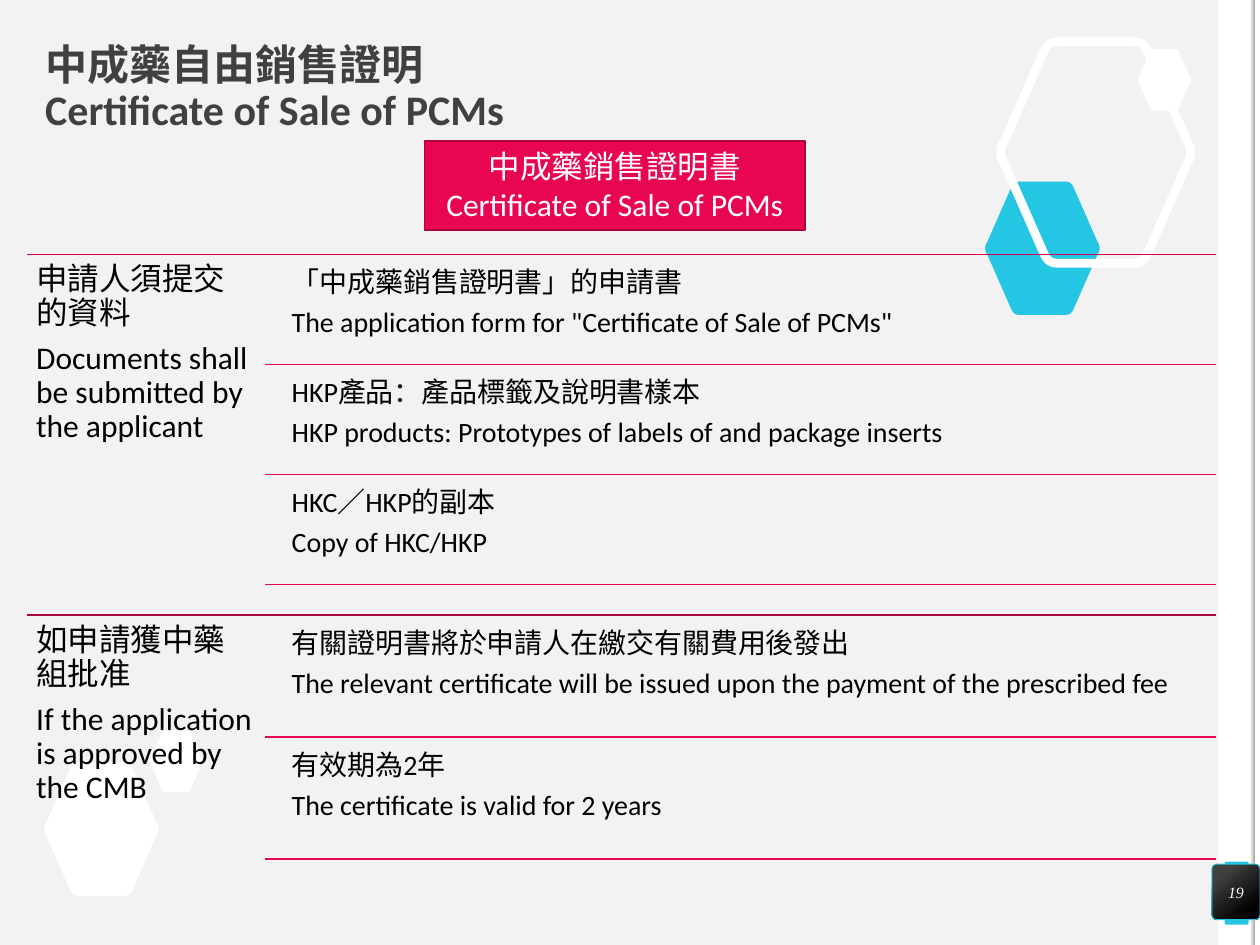
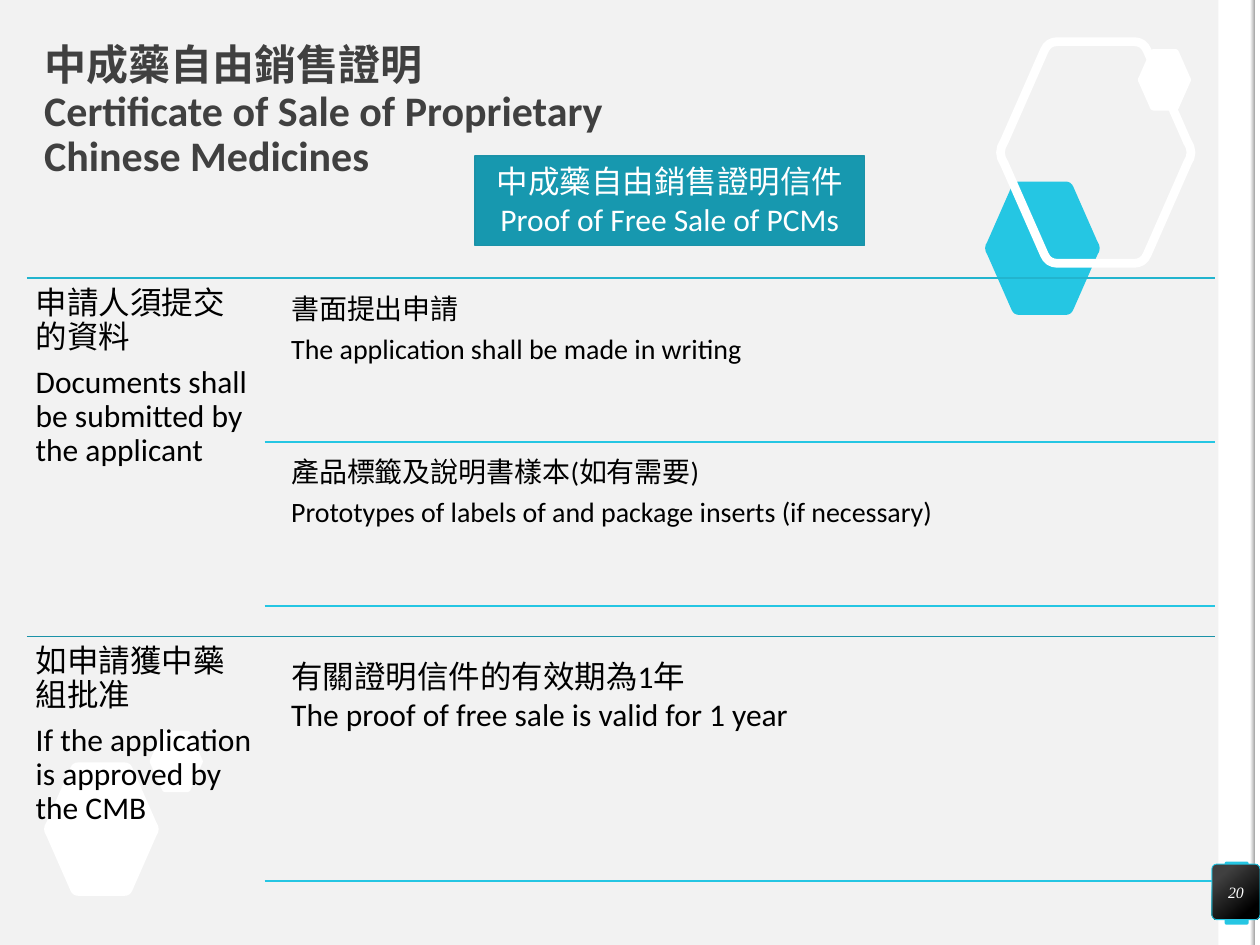
"""Builds two slides on certificates for proprietary Chinese medicines."""
from lxml import etree
from pptx import Presentation
from pptx.dml.color import RGBColor
from pptx.enum.shapes import MSO_CONNECTOR, MSO_SHAPE
from pptx.enum.text import MSO_ANCHOR, MSO_AUTO_SIZE, PP_ALIGN
from pptx.oxml.ns import qn
from pptx.util import Cm, Pt

RECT, ROUNDED = MSO_SHAPE.RECTANGLE, MSO_SHAPE.ROUNDED_RECTANGLE
STRAIGHT = MSO_CONNECTOR.STRAIGHT
TOP, MIDDLE = MSO_ANCHOR.TOP, MSO_ANCHOR.MIDDLE
LEFT, CENTER = PP_ALIGN.LEFT, PP_ALIGN.CENTER
FIXED, GROW = MSO_AUTO_SIZE.NONE, MSO_AUTO_SIZE.SHAPE_TO_FIT_TEXT

FONT, NUMBER_FONT = "Calibri", "Times New Roman"
COLORS = {
    "paper": "F2F2F2", "white": "FFFFFF", "black": "000000",
    "title": "404040", "edge": "A6A6A6", "cyan": "25C6E3",
    "cyan_mid": "22B4CE", "cyan_dark": "1B92A8", "teal": "1798AF",
    "pink": "E80554", "pink_mid": "D3054C", "pink_dark": "AC043E",
}
HEXAGON_CORNERS = [
    ((.23, .04), (.25, 0), (.3, 0)), ((.7, 0), (.75, 0), (.77, .04)),
    ((.98, .45), (1.02, .5), (.98, .55)), ((.77, .96), (.75, 1), (.7, 1)),
    ((.3, 1), (.25, 1), (.23, .96)), ((.02, .55), (-.02, .5), (.02, .45)),
]
HEXAGONS = [
    ((.89, 15.37, 2.31, 2.69), "white", None),
    ((19.86, 3.66, 2.31, 2.69), "cyan", None),
    ((20.17, .84, 3.84, 4.47), None, "white"),
    ((3.02, 14.73, 1.07, 1.24), "white", None),
    ((22.94, .99, 1.07, 1.24), "white", None),
]
DOCUMENTS = ["申請人須提交的資料", "Documents shall be submitted by the applicant"]
APPROVAL = ["如申請獲中藥組批准", "If the application is approved by the CMB"]

CERTIFICATE = {
    "number": "19",
    "title": ["中成藥自由銷售證明", "Certificate of Sale of PCMs"],
    "title_box": (.91, .53, 23.6, 2.54),
    "banner": ["中成藥銷售證明書", "Certificate of Sale of PCMs"],
    "banner_box": (8.56, 2.84, 7.67, 1.8),
    "banner_colors": ("pink", "pink_dark"),
    "item_rule": "pink",
    "sections": [
        {"box": (.55, 5.13, 23.96, 6.76), "rule": "pink_mid", "heading": DOCUMENTS,
         "items": [
             ["「中成藥銷售證明書」的申請書",
              'The application form for "Certificate of Sale of PCMs"'],
             ["HKP產品：產品標籤及說明書樣本",
              "HKP products: Prototypes of labels of and package inserts"],
             ["HKC／HKP的副本", "Copy of HKC/HKP"]]},
        {"box": (.55, 12.4, 23.96, 5.03), "rule": "pink_dark", "heading": APPROVAL,
         "items": [
             ["有關證明書將於申請人在繳交有關費用後發出",
              "The relevant certificate will be issued upon the payment"
              " of the prescribed fee"],
             ["有效期為2年", "The certificate is valid for 2 years"]]},
    ],
}
PROOF = {
    "number": "20",
    "title": ["中成藥自由銷售證明", "Certificate of Sale of Proprietary ",
              "Chinese Medicines"],
    "title_box": (.89, .97, 23.6, 2.59),
    "banner": ["中成藥自由銷售證明信件", "Proof of Free Sale of PCMs"],
    "banner_box": (9.58, 3.15, 7.85, 1.8),
    "banner_colors": ("teal", "cyan_dark"),
    "item_rule": "cyan",
    "sections": [
        {"box": (.54, 5.61, 23.96, 6.76), "rule": "cyan_mid", "heading": DOCUMENTS,
         "items": [
             ["書面提出申請", "The application shall be made in writing"],
             ["產品標籤及說明書樣本(如有需要)",
              "Prototypes of labels of and package inserts (if necessary)"]]},
        {"box": (.54, 12.83, 23.96, 5.16), "rule": "cyan_dark", "heading": APPROVAL,
         "item_size": 18, "item_style": {},
         "items": [
             ["有關證明信件的有效期為1年",
              "The proof of free sale is valid for 1 year"]]},
    ],
}
TIGHT = {"leading": .9, "after": .35}


def rgb(name):
    """Return the named colour."""
    return RGBColor.from_string(COLORS[name])


def lengths(box):
    """Turn a box in centimetres into lengths."""
    return [Cm(value) for value in box]


def paint(shape, fill=None, line=None, width=1):
    """Give a shape flat fill and outline, without shadow."""
    shape.shadow.inherit = False
    if fill:
        shape.fill.solid()
        shape.fill.fore_color.rgb = rgb(fill)
    else:
        shape.fill.background()
    if line:
        shape.line.color.rgb = rgb(line)
        shape.line.width = Pt(width)
    else:
        shape.line.fill.background()


def blend(shape, stops, angle):
    """Fill a shape with a gradient of two (position, colour) stops."""
    shape.fill.gradient()
    shape.fill.gradient_angle = angle
    for stop, (position, color) in zip(shape.fill.gradient_stops, stops):
        stop.position = position
        stop.color.rgb = rgb(color)


def add_block(slide, box, kind=RECT, **look):
    """Add a painted preset shape."""
    block = slide.shapes.add_shape(kind, *lengths(box))
    paint(block, **look)
    return block


def set_frame(frame, margin=None, anchor=TOP, fit=FIXED):
    """Set wrapping, margins, anchor and fitting of a text frame."""
    frame.word_wrap = True
    frame.auto_size = fit
    frame.vertical_anchor = anchor
    if margin is not None:
        frame.margin_left = frame.margin_right = Cm(margin)
        frame.margin_top = frame.margin_bottom = Cm(margin)


def add_run(paragraph, text, size, color, font=FONT, bold=False, italic=False):
    """Add one formatted run."""
    run = paragraph.add_run()
    run.text = text
    run.font.name, run.font.size = font, Pt(size)
    run.font.bold, run.font.italic = bold, italic
    run.font.color.rgb = rgb(color)


def write(frame, lines, size, color, align=LEFT, leading=None, after=0, **style):
    """Write one paragraph per line, with space after as a share of the size."""
    for index, text in enumerate(lines):
        paragraph = frame.add_paragraph() if index else frame.paragraphs[0]
        paragraph.alignment = align
        paragraph.line_spacing = leading
        paragraph.space_after = Pt(round(after * size, 1))
        add_run(paragraph, text, size, color, **style)


def add_text(slide, box, lines, size, **style):
    """Add a wrapped text box."""
    frame = slide.shapes.add_textbox(*lengths(box)).text_frame
    set_frame(frame, .18)
    write(frame, lines, size, "black", **style)


def add_rule(slide, left, right, y, color):
    """Add a thin horizontal rule."""
    rule = slide.shapes.add_connector(STRAIGHT, *lengths((left, y, right, y)))
    rule.line.color.rgb = rgb(color)
    rule.line.width = Pt(1)
    etree.SubElement(rule._element.spPr, qn("a:effectLst"))


def add_hexagon(slide, box, fill, line):
    """Add a hexagon with rounded corners that fills the box."""
    left, top, width, height = box
    points = []
    for corner in HEXAGON_CORNERS:
        for t in (0, .25, .5, .75, 1):
            weights = ((1 - t) ** 2, 2 * t * (1 - t), t ** 2)
            x, y = (sum(w * point[axis] for w, point in zip(weights, corner))
                    for axis in (0, 1))
            points.append((Cm(left + x * width), Cm(top + y * height)))
    builder = slide.shapes.build_freeform(*points[0])
    builder.add_line_segments(points[1:], close=True)
    paint(builder.convert_to_shape(), fill, line, 5)


def add_backdrop(slide):
    """Add the right-hand band and the hexagons."""
    add_block(slide, (24.56, 0, .74, 19.05), fill="white")
    tab = add_block(slide, (24.69, 17.37, .48, 1.27), ROUNDED, fill="cyan")
    tab.adjustments[0] = .07
    add_block(slide, (25.3, 0, .1, 19.05), fill="white")
    edge = add_block(slide, (25.2, 0, .1, 19.05))
    blend(edge, [(0, "white"), (1, "edge")], 0)
    for hexagon in HEXAGONS:
        add_hexagon(slide, *hexagon)


def add_title(slide, box, lines):
    """Place the title and write its lines."""
    title = slide.shapes.title
    title.left, title.top, title.width, title.height = lengths(box)
    set_frame(title.text_frame, 0, MIDDLE)
    paragraph = title.text_frame.paragraphs[0]
    paragraph.alignment, paragraph.line_spacing = LEFT, .9
    for index, text in enumerate(lines):
        if index:
            paragraph.add_line_break()
        add_run(paragraph, text, 24, "title", bold=True)


def add_banner(slide, box, lines, colors):
    """Add the coloured box that names the document."""
    fill, line = colors
    banner = add_block(slide, box, fill=fill, line=line)
    set_frame(banner.text_frame, fit=GROW)
    write(banner.text_frame, lines, 18, "white", CENTER)


def add_section(slide, box, rule, heading, items, item_rule,
                item_size=16, item_style=TIGHT):
    """Add a heading column and equal ruled items, spaced by 5% of their height."""
    left, top, width, height = box
    right, column = left + width, .2 * width
    add_rule(slide, left, right, top, rule)
    add_text(slide, (left, top, column, height), heading, 18, **TIGHT)
    item_height = height / (1.05 * len(items) + .05)
    gap = .05 * item_height
    for index, lines in enumerate(items):
        item_top = top + gap + index * (item_height + gap)
        item_box = (left + .215 * width, item_top, .785 * width, item_height)
        add_text(slide, item_box, lines, item_size, **item_style)
        add_rule(slide, left + column, right, item_top + item_height, item_rule)


def add_page_number(slide, box, number):
    """Add the dark badge with the page number."""
    badge = add_block(slide, box, ROUNDED, line="cyan", width=.5)
    badge.adjustments[0] = .1
    blend(badge, [(.2, "title"), (.82, "black")], 310)
    set_frame(badge.text_frame, 0, MIDDLE)
    write(badge.text_frame, [number], 9, "white", CENTER,
          font=NUMBER_FONT, italic=True)


def add_requirements_slide(deck, content):
    """Add a slide on the requirements for one document."""
    slide = deck.slides.add_slide(deck.slide_layouts[5])
    add_backdrop(slide)
    add_title(slide, content["title_box"], content["title"])
    for section in content["sections"]:
        add_section(slide, item_rule=content["item_rule"], **section)
    add_banner(slide, content["banner_box"], content["banner"],
               content["banner_colors"])
    add_page_number(slide, (24.43, 17.42, .97, 1.12), content["number"])


def main():
    """Build and save the deck."""
    deck = Presentation()
    deck.slide_width, deck.slide_height = Cm(25.4), Cm(19.05)
    background = deck.slide_master.background.fill
    background.solid()
    background.fore_color.rgb = rgb("paper")
    for content in (CERTIFICATE, PROOF):
        add_requirements_slide(deck, content)
    deck.save("out.pptx")


if __name__ == "__main__":
    main()
